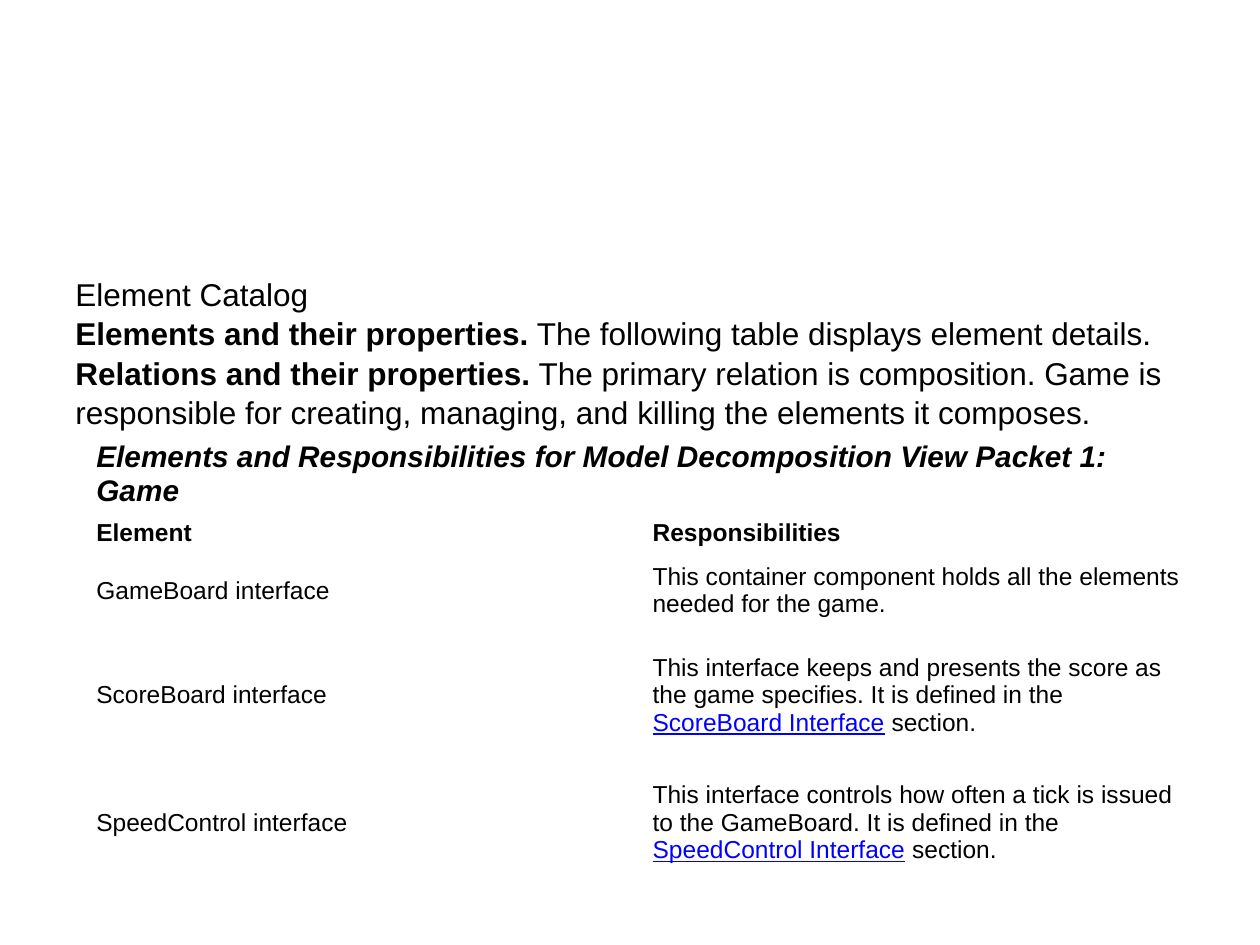
from pptx import Presentation
from pptx import util as u
from pptx.dml.color import RGBColor
from pptx.enum import text

INCH = 2.54


def write(para, parts, size, bold=False, slant=False):
    """Add (words, mark) parts; the mark is "b" for bold, "u" for link style."""
    for words, mark in parts:
        if words == "\n":
            para.add_line_break()
            continue
        run = para.add_run()
        run.text = words
        font = run.font
        font.name, font.size = "Arial", u.Pt(size)
        font.bold, font.italic = bold or mark == "b", slant
        font.underline = mark == "u"
        font.color.rgb = RGBColor.from_string("0000FF" if mark == "u" else "000000")


deck = Presentation()
deck.slide_width, deck.slide_height = u.Cm(25.4), u.Cm(19.05)
slide = deck.slides.add_slide(deck.slide_layouts[6])

# Element table
rows = [
    [[("Elements and Responsibilities for Model Decomposition View Packet 1: Game", "")]],
    [[("Element", "")], [("Responsibilities", "")]],
    [[("GameBoard interface", "")],
     [("This container component holds all the elements needed for the game.", "")]],
    [[("ScoreBoard interface", "")],
     [("This interface keeps and presents the score as the game specifies. "
       "It is defined in the ", ""),
      ("ScoreBoard Interface", "u"), (" section.", "")]],
    [[("SpeedControl interface", "")],
     [("This interface controls how often a tick is issued to the GameBoard. "
       "It is defined in the ", ""),
      ("SpeedControl Interface", "u"), (" section.", "")]],
]
highs = [0.42, 0.28, 0.6, 1.06, 0.96]
table = slide.shapes.add_table(
    len(rows), 2, u.Cm(0.67 * INCH), u.Cm(3.45 * INCH),
    u.Cm(8.83 * INCH), u.Cm(sum(highs) * INCH)).table
table.first_row = table.horz_banding = False
table.cell(0, 0).merge(table.cell(0, 1))
for r, (row, high) in enumerate(zip(rows, highs)):
    table.rows[r].height = u.Cm(high * INCH)
    for cell in table.rows[r].cells:
        cell.fill.background()
        cell.vertical_anchor = text.MSO_ANCHOR.MIDDLE
        cell.margin_left = cell.margin_right = u.Cm(0.24)
        cell.margin_top = cell.margin_bottom = u.Cm(0.12)
    for c, parts in enumerate(row):
        para = table.cell(r, c).text_frame.paragraphs[0]
        write(para, parts, 17 if r == 0 else 14, bold=r < 2, slant=r == 0)

# Introduction above the table
intro = [
    [("Element Catalog ", ""), ("\n", ""),
     ("Elements and their properties.", "b"),
     (" The following table displays element details.", "")],
    [("Relations and their properties.", "b"),
     (" The primary relation is composition. Game is", "")],
    [("responsible for creating, managing, and killing the elements it composes.", "")],
]
frame = slide.shapes.add_textbox(
    u.Cm(0.5 * INCH), u.Cm(2.14 * INCH), u.Cm(8.98 * INCH), u.Cm(1.31 * INCH)).text_frame
frame.word_wrap = True
frame.vertical_anchor = text.MSO_ANCHOR.MIDDLE
for i, parts in enumerate(intro):
    para = frame.add_paragraph() if i else frame.paragraphs[0]
    para.line_spacing = 1.04
    write(para, parts, 18)

deck.save("out.pptx")
